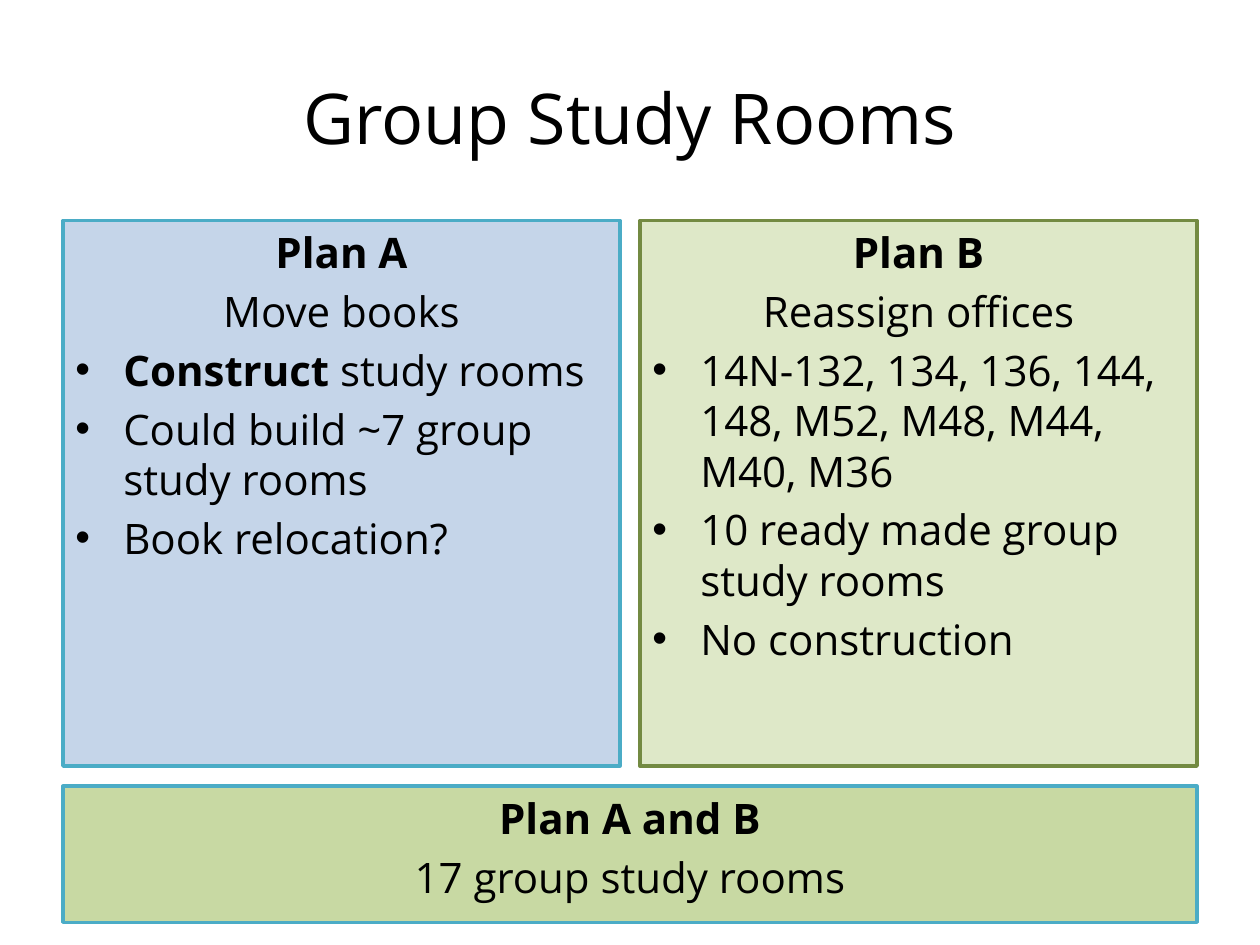
import dataclasses
import typing

import lxml.etree
import pptx
import pptx.dml.color
import pptx.enum.shapes
import pptx.enum.text
import pptx.oxml.ns
import pptx.util

Inches = pptx.util.Inches
Pt = pptx.util.Pt
ALIGN = pptx.enum.text.PP_ALIGN
ANCHOR = pptx.enum.text.MSO_ANCHOR
FONT = "Open Sans"
qn = pptx.oxml.ns.qn


@dataclasses.dataclass
class Panel:
    left: float
    top: float
    width: float
    height: float
    fill: str
    alpha: int
    line: str
    head: str
    sub: str
    items: tuple = ()  # each item is a tuple of (text, bold) runs


def color(code: str) -> pptx.dml.color.RGBColor:
    return pptx.dml.color.RGBColor.from_string(code)


def write(para: typing.Any, text: str, size: float = 24, bold: bool = False) -> None:
    run = para.add_run()
    run.text = text
    run.font.name = FONT
    run.font.size = Pt(size)
    run.font.bold = bold
    run.font.color.rgb = color("000000")


def bullet(para: typing.Any) -> None:
    props = para._p.get_or_add_pPr()
    props.set("marL", str(Inches(0.38)))
    props.set("indent", str(-Inches(0.38)))
    font = lxml.etree.SubElement(props, qn("a:buFont"))
    font.set("typeface", "Arial")
    lxml.etree.SubElement(props, qn("a:buChar")).set("char", "•")


def draw(slide: typing.Any, panel: Panel) -> None:
    box = slide.shapes.add_shape(
        pptx.enum.shapes.MSO_SHAPE.RECTANGLE,
        Inches(panel.left), Inches(panel.top),
        Inches(panel.width), Inches(panel.height))
    box.shadow.inherit = False
    box.fill.solid()
    box.fill.fore_color.rgb = color(panel.fill)
    tint = box.fill._xPr.find(qn("a:solidFill"))[0]
    lxml.etree.SubElement(tint, qn("a:alpha")).set("val", str(panel.alpha * 1000))
    box.line.color.rgb = color(panel.line)
    box.line.width = Pt(2)

    frame = box.text_frame
    frame.word_wrap = True
    frame.vertical_anchor = ANCHOR.TOP
    rows = (((panel.head, True),), ((panel.sub, False),)) + panel.items
    for i, runs in enumerate(rows):
        para = frame.add_paragraph() if i else frame.paragraphs[0]
        para.alignment = ALIGN.CENTER if i < 2 else ALIGN.LEFT
        para.space_before = Pt(4.8)
        para.line_spacing = Pt(28.8)
        if i >= 2:
            bullet(para)
        for text, bold in runs:
            write(para, text, bold=bold)


# Two plans side by side, with their sum below
EDGE, FULL, HALF = 0.5, 9, 4.42
TOP, TALL = 1.75, 4.33
PANELS = (
    Panel(EDGE, TOP, HALF, TALL, "4F81BD", 33, "4BACC6", "Plan A", "Move books", (
        (("Construct", True), (" study rooms", False)),
        (("Could build ~7 group study rooms", False),),
        (("Book relocation?", False),))),
    Panel(EDGE + FULL - HALF, TOP, HALF, TALL, "9BBB59", 33, "738A42",
          "Plan B", "Reassign offices", (
              (("14N-132, 134, 136, 144, 148, M52, M48, M44, M40, M36", False),),
              (("10 ready made group study rooms", False),),
              (("No construction", False),))),
    Panel(EDGE, 6.24, FULL, 1.08, "9BBB59", 55, "4BACC6",
          "Plan A and B", "17 group study rooms"),
)


def main() -> None:
    deck = pptx.Presentation()
    deck.slide_width, deck.slide_height = Inches(10), Inches(7.5)
    slide = deck.slides.add_slide(deck.slide_layouts[5])

    # Title
    title = slide.shapes.title
    title.left, title.top = Inches(EDGE), Inches(0.3)
    title.width, title.height = Inches(FULL), Inches(1.25)
    title.text_frame.vertical_anchor = ANCHOR.MIDDLE
    para = title.text_frame.paragraphs[0]
    para.alignment = ALIGN.CENTER
    write(para, "Group Study Rooms", size=40)

    # Panels
    for panel in PANELS:
        draw(slide, panel)
    deck.save("out.pptx")


if __name__ == "__main__":
    main()
